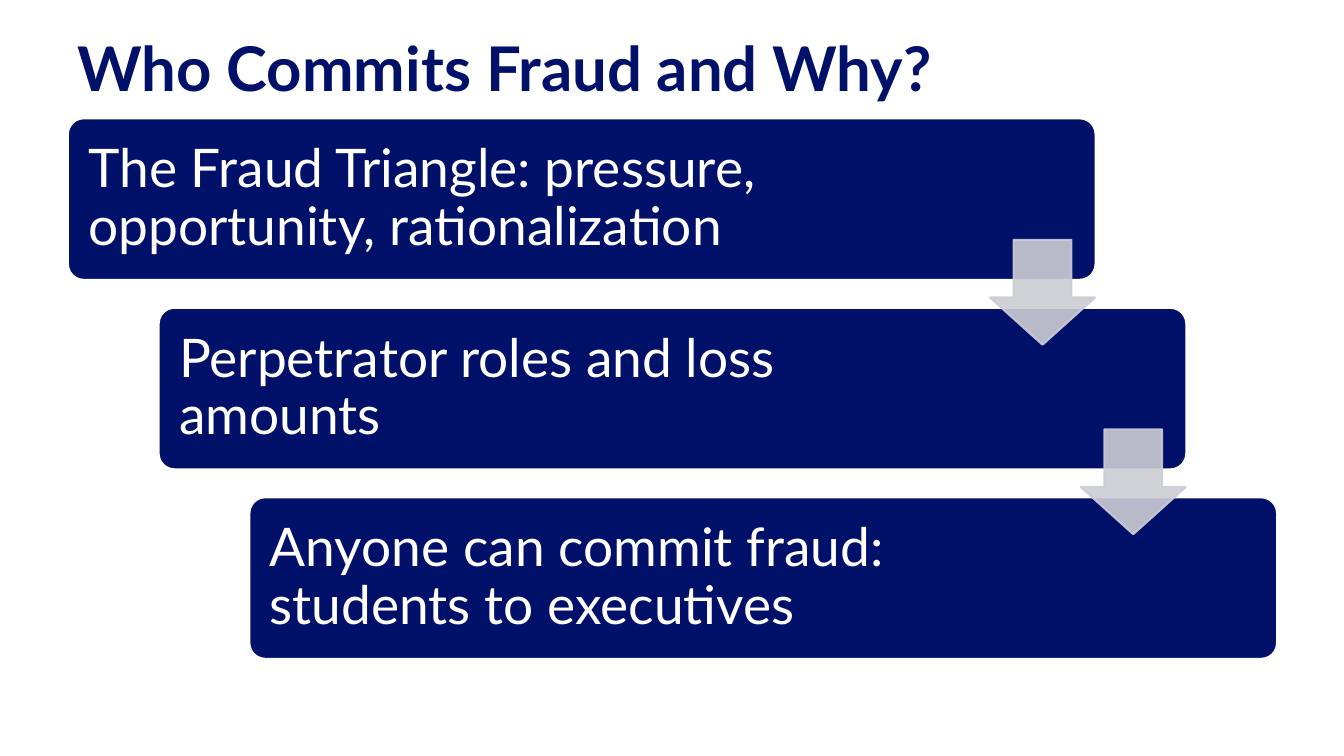
from dataclasses import dataclass

from lxml import etree
from pptx import Presentation
from pptx.dml.color import RGBColor
from pptx.enum.shapes import MSO_SHAPE
from pptx.enum.text import MSO_ANCHOR, PP_ALIGN
from pptx.oxml.ns import qn
from pptx.util import Emu, Pt

ROUND_RECT = MSO_SHAPE.ROUNDED_RECTANGLE
DOWN_ARROW = MSO_SHAPE.DOWN_ARROW
MIDDLE = MSO_ANCHOR.MIDDLE
LEFT = PP_ALIGN.LEFT
EMU_PER_PX = 9144


def px(n):
    return Emu(n * EMU_PER_PX)


@dataclass(frozen=True)
class Theme:
    navy: RGBColor = RGBColor(0x01, 0x11, 0x69)
    white: RGBColor = RGBColor(0xFF, 0xFF, 0xFF)
    grey: RGBColor = RGBColor(0xCC, 0xCC, 0xD4)
    font: str = "Lato"
    title_size: int = 44
    step_size: int = 38
    arrow_alpha: int = 90


class Deck:
    """Draws styled elements on the current slide."""

    def __init__(self, theme, width, height):
        self.theme = theme
        self.prs = Presentation()
        self.prs.slide_width, self.prs.slide_height = px(width), px(height)
        self.s = None

    def add_slide(self):
        self.s = self.prs.slides.add_slide(self.prs.slide_layouts[6])

    def set_text(self, tf, text, size, color, bold=False):
        tf.word_wrap = True
        tf.vertical_anchor = MIDDLE
        tf.text = text
        p = tf.paragraphs[0]
        p.alignment = LEFT
        p.line_spacing = 0.9
        font = p.runs[0].font
        font.name, font.size, font.bold = self.theme.font, Pt(size), bold
        font.color.rgb = color

    def shape(self, kind, box, adjustments, fill, line, line_width):
        sp = self.s.shapes.add_shape(kind, *map(px, box))
        sp.shadow.inherit = False
        for i, value in enumerate(adjustments):
            sp.adjustments[i] = value
        sp.fill.solid()
        sp.fill.fore_color.rgb = fill
        sp.line.color.rgb = line
        sp.line.width = Pt(line_width)
        return sp

    def title(self, text, box):
        sp = self.s.shapes.add_textbox(*map(px, box))
        self.set_text(sp.text_frame, text, self.theme.title_size, self.theme.navy, True)

    def step(self, text, box):
        t = self.theme
        sp = self.shape(ROUND_RECT, box, [0.1], t.navy, t.white, 2)
        tf = sp.text_frame
        tf.margin_left, tf.margin_right = px(16), px(211)
        self.set_text(tf, text, t.step_size, t.white)

    def arrow(self, box):
        t = self.theme
        sp = self.shape(DOWN_ARROW, box, [0.55, 0.45], t.grey, t.grey, 1.5)
        for color in sp._element.spPr.iter(qn("a:srgbClr")):
            etree.SubElement(color, qn("a:alpha"), val=str(t.arrow_alpha * 1000))

    def save(self):
        self.prs.save("out.pptx")


def main():
    steps = [
        "The Fraud Triangle: pressure, opportunity, rationalization",
        "Perpetrator roles and loss amounts",
        "Anyone can commit fraud: students to executives",
    ]
    step_dx, step_dy = 90, 188
    deck = Deck(Theme(), 1333, 750)
    deck.add_slide()
    deck.title("Who Commits Fraud and Why?", (67, 21, 1200, 100))
    for i, text in enumerate(steps):
        deck.step(text, (67 + i * step_dx, 117 + i * step_dy, 1020, 161))
    for i in range(len(steps) - 1):
        deck.arrow((982 + i * step_dx, 238 + i * step_dy, 104, 104))
    deck.save()


if __name__ == "__main__":
    main()
